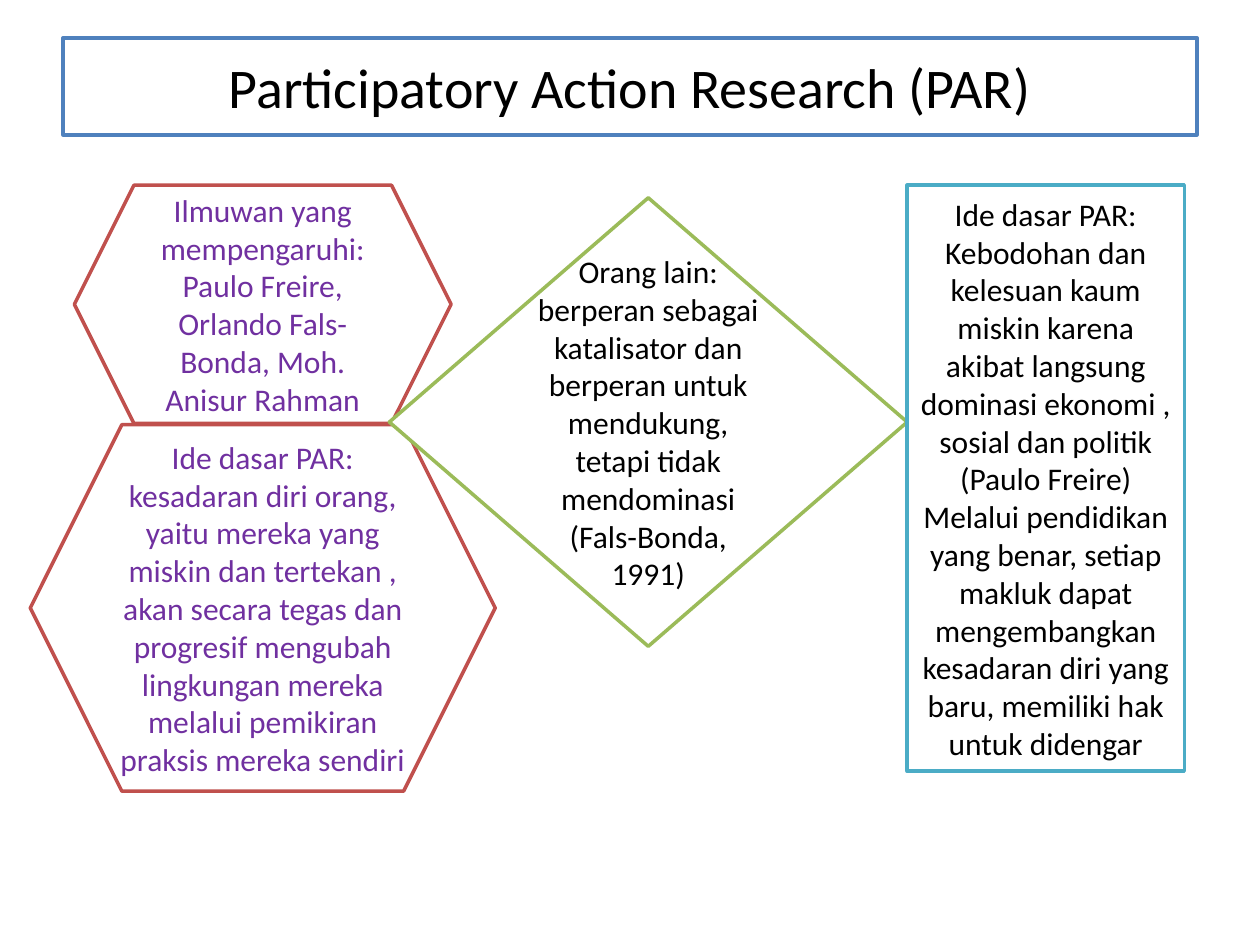
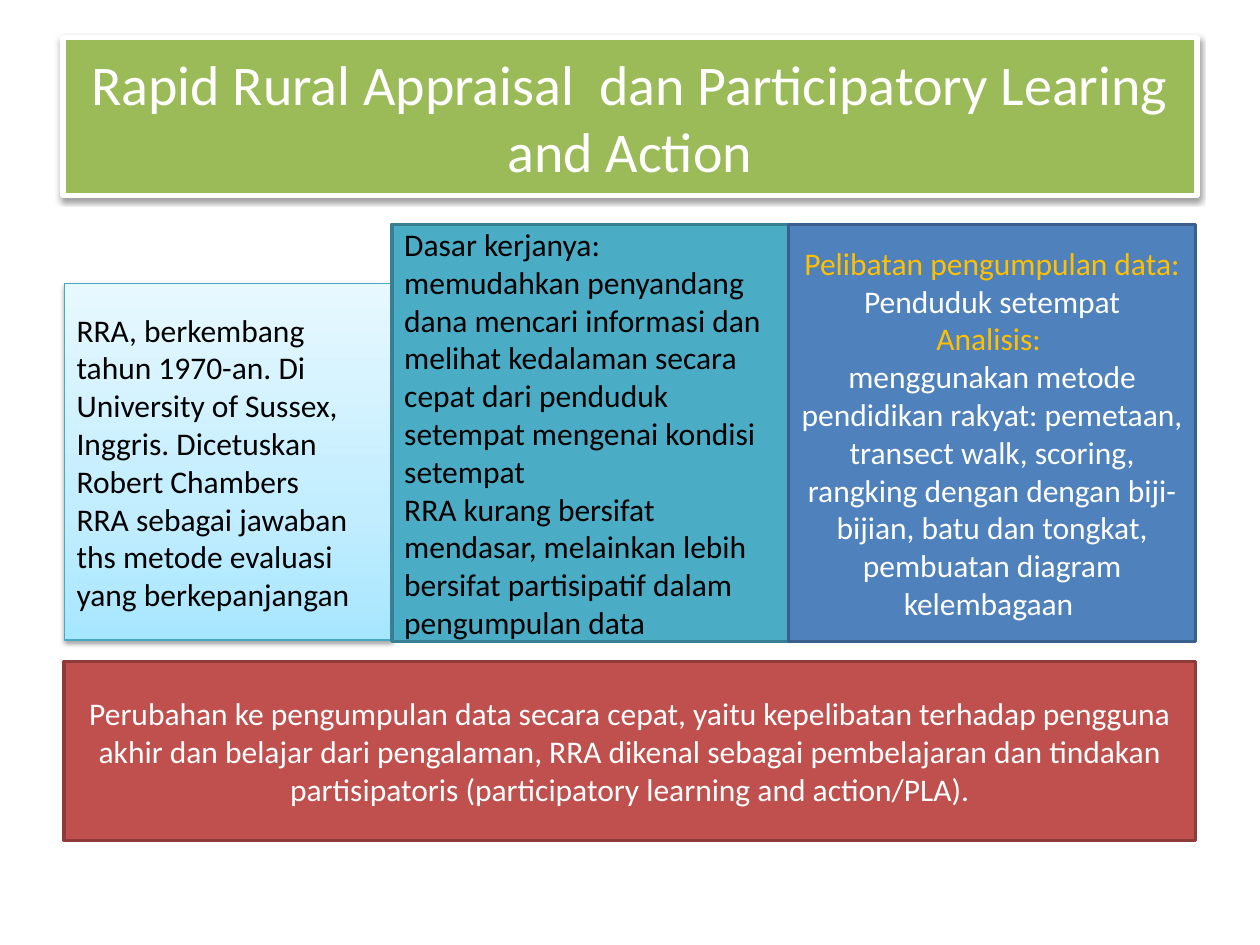
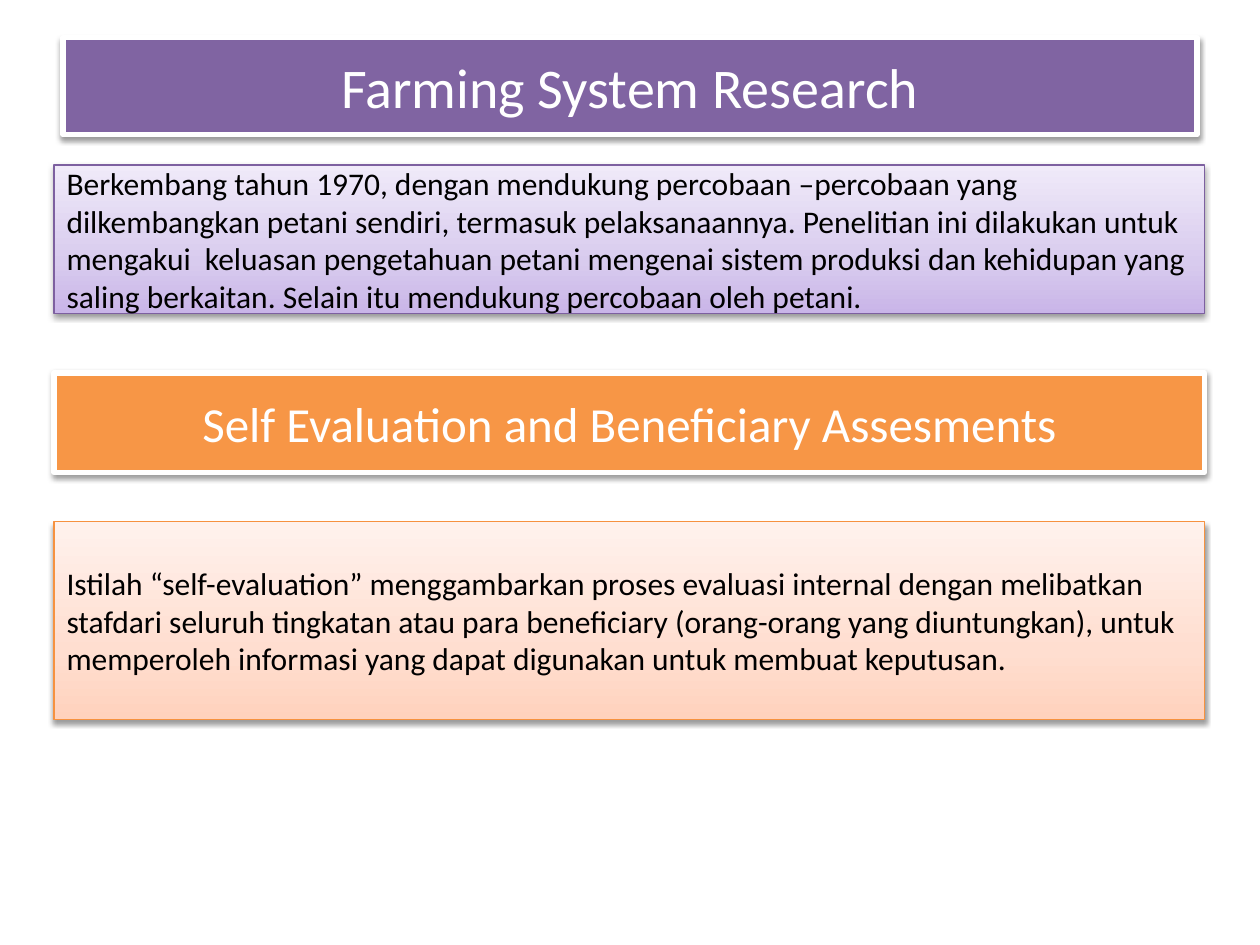
import itertools

import pptx
import pptx.dml.color
import pptx.enum.shapes
import pptx.enum.text
import pptx.oxml
import pptx.oxml.ns
import pptx.util
from pptx.util import Inches

FONT = "Calibri"
BODY_SIZE, BANNER_SIZE, TITLE_SIZE = 18, 28, 32
BLACK, WHITE = "000000", "FFFFFF"
BLUE, RED, GREEN = "4F81BD", "C0504D", "9BBB59"
PURPLE, TEAL, ORANGE = "8064A2", "4BACC6", "F79646"
VIOLET_TEXT, GOLD_TEXT = "7030A0", "FFC000"

SHAPE = pptx.enum.shapes.MSO_SHAPE
ALIGN = pptx.enum.text.PP_ALIGN
GRADIENT_STOPS = (0, 35, 100)


def rgb(value):
    return pptx.dml.color.RGBColor.from_string(value)


def a_element(xml):
    """Parse a DrawingML fragment whose root tag ends with the namespace slot."""
    return pptx.oxml.parse_xml(xml.format(ns=pptx.oxml.ns.nsdecls("a")))


def set_gradient(sp, colours):
    """Run the colours from the bottom edge up to the top edge."""
    sp.fill.gradient()
    sp.fill.gradient_angle = 90
    stops = sp.element.spPr.find(".//" + pptx.oxml.ns.qn("a:gsLst"))
    for old in list(stops):
        stops.remove(old)
    for pos, colour in zip(GRADIENT_STOPS, colours):
        stops.append(a_element(
            f'<a:gs {{ns}} pos="{pos * 1000}"><a:srgbClr val="{colour}"/></a:gs>'))


def add_shadow(sp):
    effects = sp.element.spPr.find(pptx.oxml.ns.qn("a:effectLst"))
    effects.append(a_element(
        '<a:outerShdw {ns} blurRad="40000" dist="20000" dir="5400000" rotWithShape="0">'
        '<a:srgbClr val="000000"><a:alpha val="38000"/></a:srgbClr></a:outerShdw>'))


def style_box(sp, fill, line, width, shadow=False):
    """Fill with one colour, or with a gradient when given several."""
    sp.shadow.inherit = False
    if isinstance(fill, str):
        sp.fill.solid()
        sp.fill.fore_color.rgb = rgb(fill)
    else:
        set_gradient(sp, fill)
    sp.line.color.rgb = rgb(line)
    sp.line.width = pptx.util.Pt(width)
    if shadow:
        add_shadow(sp)


def write(sp, paragraphs, size, colours, align=ALIGN.CENTER):
    """Write one paragraph per string, cycling through the colours."""
    tf = sp.text_frame
    tf.text = "\n".join(paragraphs)
    tf.word_wrap = True
    tf.auto_size = pptx.enum.text.MSO_AUTO_SIZE.NONE
    tf.vertical_anchor = pptx.enum.text.MSO_ANCHOR.MIDDLE
    for p, colour in zip(tf.paragraphs, itertools.cycle(colours)):
        p.alignment = align
        for r in p.runs:
            r.font.name = FONT
            r.font.size = pptx.util.Pt(size)
            r.font.color.rgb = rgb(colour)


def add_box(slide, kind, box):
    return slide.shapes.add_shape(kind, *map(Inches, box))


def add_titled_slide(prs, text, height=0.77):
    s = prs.slides.add_slide(prs.slide_layouts[5])
    title = s.shapes.title
    title.left, title.top = Inches(0.5), Inches(0.3)
    title.width, title.height = Inches(9), Inches(height)
    title.text = text
    return s, title


def style_banner(sp, text, fill, size):
    """White-framed colour band with a shadow."""
    style_box(sp, fill, WHITE, 3, shadow=True)
    write(sp, [text], size, [WHITE])


def add_outline(slide, kind, box, line, paragraphs, colour=BLACK):
    sp = add_box(slide, kind, box)
    style_box(sp, WHITE, line, 2)
    write(sp, paragraphs, BODY_SIZE, [colour])


def add_panel(slide, box, fill, line, paragraphs, colours, align=ALIGN.CENTER):
    sp = add_box(slide, SHAPE.RECTANGLE, box)
    style_box(sp, fill, line, 2)
    write(sp, paragraphs, BODY_SIZE, colours, align)


def add_tinted_note(slide, box, gradient, line, paragraphs):
    sp = add_box(slide, SHAPE.RECTANGLE, box)
    style_box(sp, gradient, line, 0.75, shadow=True)
    write(sp, paragraphs, BODY_SIZE, [BLACK], ALIGN.LEFT)


def build_par(prs):
    title_text = "Participatory Action Research (PAR)"
    s, title = add_titled_slide(prs, title_text)
    style_box(title, WHITE, BLUE, 2)
    write(title, [title_text], TITLE_SIZE, [BLACK])
    add_outline(s, SHAPE.HEXAGON, (0.59, 1.47, 2.99, 1.89), RED, [
        "Ilmuwan yang mempengaruhi:",
        "Paulo Freire, Orlando Fals-Bonda, Moh. Anisur Rahman",
    ], VIOLET_TEXT)
    add_outline(s, SHAPE.HEXAGON, (0.24, 3.37, 3.69, 2.91), RED, [
        "Ide dasar PAR: kesadaran diri orang, yaitu mereka yang miskin dan "
        "tertekan , akan secara tegas dan progresif mengubah lingkungan mereka "
        "melalui pemikiran praksis mereka sendiri",
    ], VIOLET_TEXT)
    add_outline(s, SHAPE.DIAMOND, (3.09, 1.57, 4.11, 3.56), GREEN, [
        "Orang lain: berperan sebagai katalisator dan berperan untuk mendukung, "
        "tetapi tidak mendominasi (Fals-Bonda, 1991)",
    ])
    add_outline(s, SHAPE.RECTANGLE, (7.2, 1.47, 2.2, 4.65), TEAL, [
        "Ide dasar PAR:",
        "Kebodohan dan kelesuan kaum miskin karena akibat langsung dominasi "
        "ekonomi , sosial dan politik (Paulo Freire)",
        "Melalui pendidikan yang benar, setiap makluk dapat mengembangkan "
        "kesadaran diri yang baru, memiliki hak untuk didengar",
    ])


def build_rra(prs):
    title_text = "Rapid Rural Appraisal  dan Participatory Learing and Action"
    s, title = add_titled_slide(prs, title_text, height=1.25)
    style_banner(title, title_text, GREEN, TITLE_SIZE)
    add_tinted_note(s, (0.51, 2.25, 2.6, 2.83), ("A7E6FF", "C1EDFF", "E7F8FF"), "46AAC5", [
        "RRA, berkembang tahun 1970-an. Di University of Sussex, Inggris. "
        "Dicetuskan Robert Chambers",
        "RRA sebagai jawaban ths metode evaluasi yang berkepanjangan",
    ])
    add_panel(s, (3.11, 1.78, 3.15, 3.31), TEAL, "377F92", [
        "Dasar kerjanya: memudahkan penyandang dana mencari informasi dan melihat "
        "kedalaman secara cepat dari penduduk setempat mengenai kondisi setempat",
        "RRA kurang bersifat mendasar, melainkan lebih bersifat partisipatif "
        "dalam pengumpulan data",
    ], [BLACK], ALIGN.LEFT)
    add_panel(s, (6.26, 1.78, 3.23, 3.31), BLUE, "3A5F8C", [
        "Pelibatan pengumpulan data:",
        "Penduduk setempat",
        "Analisis: ",
        "menggunakan metode pendidikan rakyat: pemetaan, transect walk, scoring, "
        "rangking dengan dengan biji-bijian, batu dan tongkat, pembuatan diagram "
        "kelembagaan ",
    ], [GOLD_TEXT, WHITE])
    add_panel(s, (0.51, 5.25, 8.98, 1.42), RED, "8E3B39", [
        "Perubahan ke pengumpulan data secara cepat, yaitu kepelibatan terhadap "
        "pengguna akhir dan belajar dari pengalaman, RRA dikenal sebagai "
        "pembelajaran dan tindakan partisipatoris (participatory learning and "
        "action/PLA).",
    ], [WHITE])


def build_farming(prs):
    left, width = 0.43, 9.13
    title_text = "Farming System Research"
    s, title = add_titled_slide(prs, title_text)
    style_banner(title, title_text, PURPLE, TITLE_SIZE)
    add_tinted_note(s, (left, 1.31, width, 1.18), ("C9B5E8", "D8CBEE", "F0EAF9"), "7D60A0", [
        "Berkembang tahun 1970, dengan mendukung percobaan –percobaan yang "
        "dilkembangkan petani sendiri, termasuk pelaksanaannya. Penelitian ini "
        "dilakukan untuk mengakui  keluasan pengetahuan petani mengenai sistem "
        "produksi dan kehidupan yang saling berkaitan. Selain itu mendukung "
        "percobaan oleh petani.",
    ])
    add_tinted_note(s, (left, 4.14, width, 1.57), ("FFD2BD", "FFDED0", "FFF2ED"), "F69240", [
        "Istilah “self-evaluation” menggambarkan proses evaluasi internal dengan "
        "melibatkan stafdari seluruh tingkatan atau para beneficiary (orang-orang "
        "yang diuntungkan), untuk memperoleh informasi yang dapat digunakan untuk "
        "membuat keputusan.",
    ])
    banner = add_box(s, SHAPE.RECTANGLE, (left, 2.96, width, 0.79))
    style_banner(banner, "Self Evaluation and Beneficiary Assesments", ORANGE, BANNER_SIZE)


def main():
    prs = pptx.Presentation()
    prs.slide_width, prs.slide_height = Inches(10), Inches(7.5)
    build_par(prs)
    build_rra(prs)
    build_farming(prs)
    prs.save("out.pptx")


if __name__ == "__main__":
    main()
